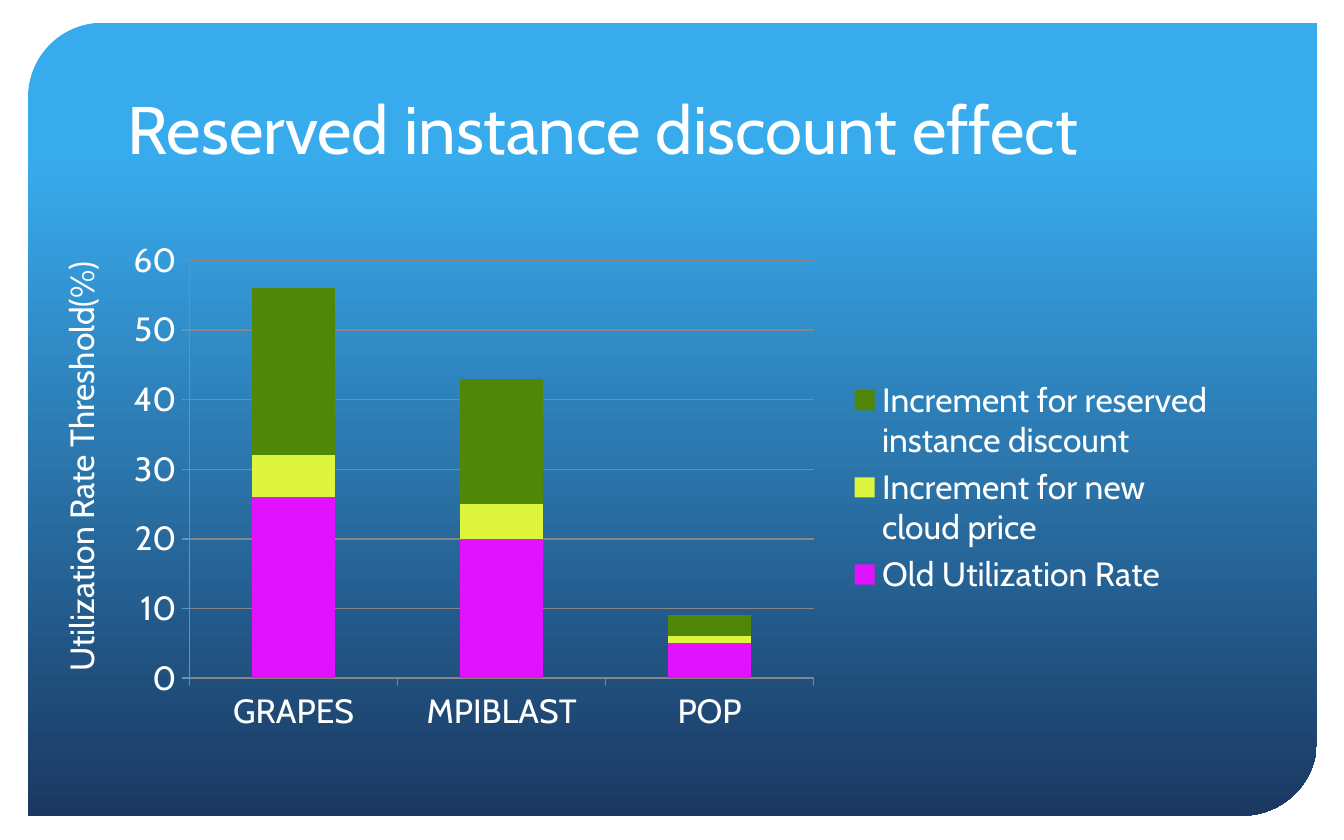
from pptx import Presentation
from pptx.chart import data as cd
from pptx.dml.color import RGBColor
from pptx.enum import chart as ch, shapes, text
from pptx.oxml import parse_xml
from pptx.util import Cm, Pt

WHITE = RGBColor(0xFF, 0xFF, 0xFF)
SKY = RGBColor(0x38, 0xAB, 0xED)
NAVY = RGBColor(0x1B, 0x38, 0x61)
GREY = RGBColor(0x86, 0x86, 0x86)
BLUE = RGBColor(0x4A, 0x9B, 0xD0)
PINK = RGBColor(0xE1, 0x13, 0xFF)
LIME = RGBColor(0xDD, 0xF5, 0x3D)
GREEN = RGBColor(0x50, 0x87, 0x09)
FACE = "Cabin"


def style(font, size):
    font.name, font.size = FACE, Pt(size)
    font.color.rgb = WHITE


def place(part, x, y, w, h, inner=False):
    """Fix a plot area or legend at fractions of the chart's size."""
    for old in part.xpath("c:layout"):
        part.remove(old)
    target = '<c:layoutTarget val="inner"/>' if inner else ""
    layout = parse_xml(
        '<c:layout xmlns:c="http://schemas.openxmlformats.org/drawingml/2006/chart">'
        f'<c:manualLayout>{target}<c:xMode val="edge"/><c:yMode val="edge"/>'
        f'<c:x val="{x}"/><c:y val="{y}"/><c:w val="{w}"/><c:h val="{h}"/>'
        "</c:manualLayout></c:layout>")
    part.insert(0 if inner else 1, layout)


deck = Presentation()
deck.slide_width, deck.slide_height = Cm(25.4), Cm(15.88)
slide = deck.slides.add_slide(deck.slide_layouts[5])

# Backdrop, behind the title
panel = slide.shapes.add_shape(shapes.MSO_SHAPE.ROUND_2_DIAG_RECTANGLE,
                               Cm(0.53), Cm(0.43), Cm(24.36), Cm(14.99))
panel.adjustments[0], panel.adjustments[1] = 0.094, 0
panel.shadow.inherit = False
panel.line.fill.background()
panel.fill.gradient()
panel.fill.gradient_angle = 270
for stop, (color, pos) in zip(panel.fill.gradient_stops, [(SKY, 0.17), (NAVY, 1)]):
    stop.color.rgb, stop.position = color, pos
slide.shapes._spTree.insert(2, panel._element)

# Title
title = slide.shapes.title
title.left, title.top, title.width, title.height = Cm(2.16), Cm(0.89), Cm(21.06), Cm(2.41)
frame = title.text_frame
frame.text = "Reserved instance discount effect"
frame.vertical_anchor = text.MSO_ANCHOR.BOTTOM
frame.paragraphs[0].alignment = text.PP_ALIGN.LEFT
style(frame.paragraphs[0].font, 36)

# Stacked columns
rows = [
    ("Old Utilization Rate", (26, 20, 5), PINK),
    ("Increment for new cloud price", (6, 5, 1), LIME),
    ("Increment for reserved instance discount", (24, 18, 3), GREEN),
]
data = cd.CategoryChartData()
data.categories = ["GRAPES", "MPIBLAST", "POP"]
for name, vals, _ in rows:
    data.add_series(name, vals)
chart = slide.shapes.add_chart(ch.XL_CHART_TYPE.COLUMN_STACKED, Cm(2.11), Cm(4.34),
                               Cm(21.06), Cm(9.75), data).chart
chart.has_title = False
style(chart.font, 18)
plot = chart.plots[0]
plot.gap_width, plot.overlap = 150, 100
plot.vary_by_categories = False
for series, (_, _, color) in zip(plot.series, rows):
    series.format.fill.solid()
    series.format.fill.fore_color.rgb = color

for axis, color in [(chart.category_axis, GREY), (chart.value_axis, BLUE)]:
    axis.major_tick_mark = ch.XL_TICK_MARK.OUTSIDE
    axis.format.line.color.rgb = color
    axis.format.line.width = Pt(0.75)
    style(axis.tick_labels.font, 18)
scale = chart.value_axis
scale.minimum_scale, scale.maximum_scale, scale.major_unit = 0, 60, 10
scale.major_gridlines.format.line.color.rgb = GREY
scale.major_gridlines.format.line.width = Pt(0.75)

chart.has_legend = True
legend = chart.legend
legend.position = ch.XL_LEGEND_POSITION.RIGHT
legend.include_in_layout = False
style(legend.font, 18)
place(chart._chartSpace.chart.plotArea, 0.07, 0.06, 0.56, 0.81, inner=True)
place(legend._element, 0.66, 0.28, 0.33, 0.44)

# Axis caption, read upwards
label = slide.shapes.add_textbox(Cm(1.02), Cm(4.34), Cm(1.27), Cm(8.61))
frame = label.text_frame
frame.word_wrap = True
frame._txBody.bodyPr.set("vert", "vert270")
frame.text = "Utilization Rate Threshold(%)"
style(frame.paragraphs[0].font, 18)

deck.save("out.pptx")
